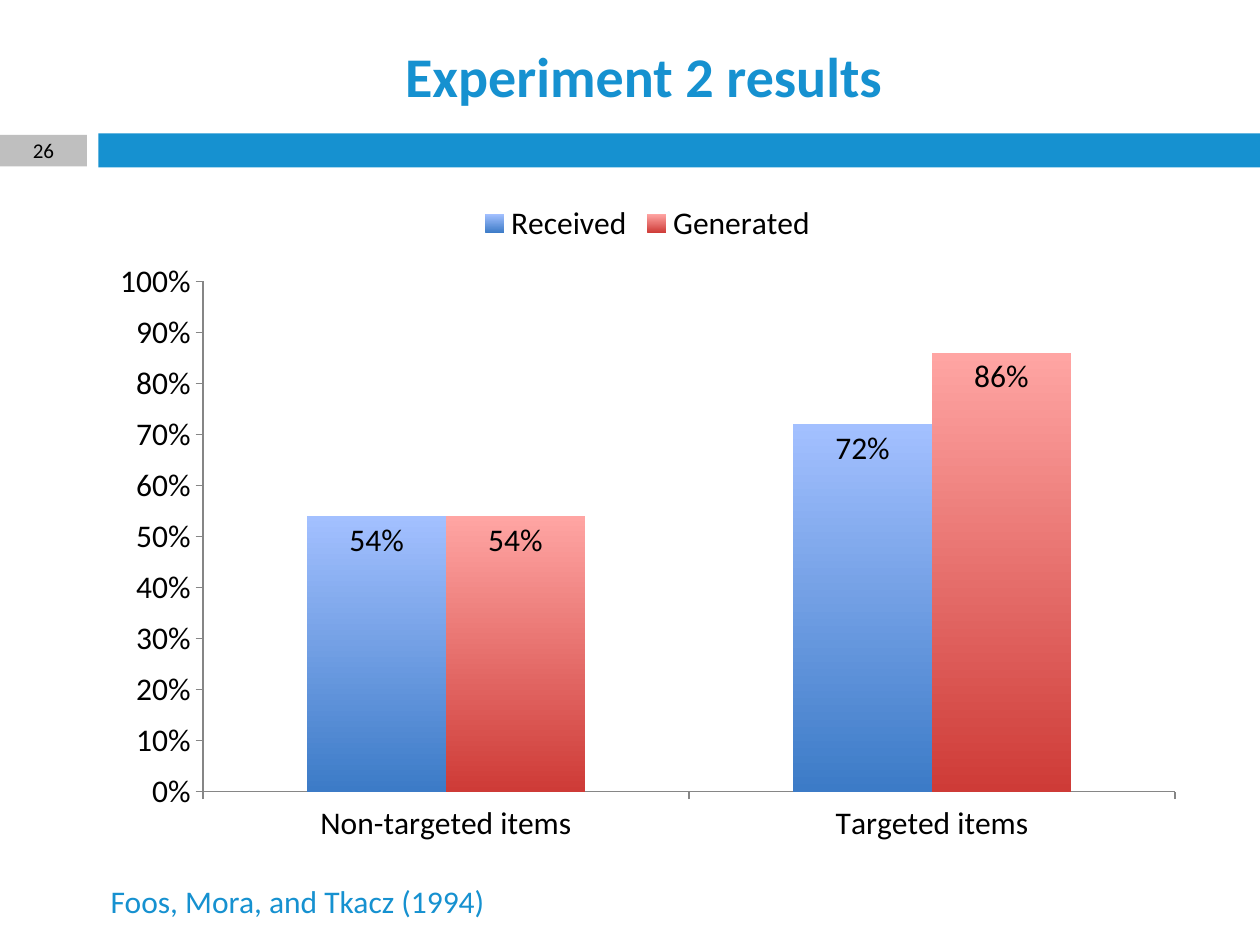
from pptx import Presentation
from pptx.chart.data import CategoryChartData
from pptx.dml.color import RGBColor
from pptx.enum.chart import XL_CHART_TYPE, XL_LABEL_POSITION, XL_LEGEND_POSITION, XL_TICK_MARK
from pptx.enum.shapes import MSO_SHAPE
from pptx.enum.text import MSO_ANCHOR, MSO_AUTO_SIZE, PP_ALIGN
from pptx.util import Inches, Pt

FONT = "Calibri"
COLORS = {
    "accent": "1691D0",
    "gray": "BFBFBF",
    "text": "000000",
    "axis": "868686",
}
CATEGORIES = ["Non-targeted items", "Targeted items"]
SERIES = [
    ("Received", (0.54, 0.72), ("3C7BC7", "A3C0FF")),
    ("Generated", (0.54, 0.86), ("CE3B37", "FFA5A3")),
]


def rgb(name):
    return RGBColor.from_string(COLORS[name])


def set_text(s, text, size, color="text", bold=False, align=PP_ALIGN.LEFT, anchor=MSO_ANCHOR.TOP):
    tf = s.text_frame
    tf.word_wrap = True
    tf.vertical_anchor = anchor
    p = tf.paragraphs[0]
    p.alignment = align
    r = p.add_run()
    r.text = text
    r.font.name = FONT
    r.font.size = Pt(size)
    r.font.bold = bold
    r.font.color.rgb = rgb(color)


def add_bar(slide, box, color):
    s = slide.shapes.add_shape(MSO_SHAPE.RECTANGLE, *box)
    s.shadow.inherit = False
    s.fill.solid()
    s.fill.fore_color.rgb = rgb(color)
    s.line.fill.background()
    return s


def add_title(slide, box, text):
    s = slide.shapes.title
    s.left, s.top, s.width, s.height = box
    set_text(s, text, 32, "accent", True, PP_ALIGN.CENTER, MSO_ANCHOR.MIDDLE)


def add_band(slide, box, number):
    left, top, width, height = box
    tab_width, gap = Inches(0.69), Inches(0.09)
    bar_left = left + tab_width + gap
    add_bar(slide, (bar_left, top, width - tab_width - gap, height), "accent")
    tab_box = (left, top + Inches(0.01), tab_width, height - Inches(0.02))
    tab = add_bar(slide, tab_box, "gray")
    tf = tab.text_frame
    tf.margin_top = tf.margin_bottom = 0
    set_text(tab, number, 12, align=PP_ALIGN.CENTER, anchor=MSO_ANCHOR.MIDDLE)


def add_results_chart(slide, box):
    data = CategoryChartData(number_format="0%")
    data.categories = CATEGORIES
    for name, values, _ in SERIES:
        data.add_series(name, values)
    chart = slide.shapes.add_chart(XL_CHART_TYPE.COLUMN_CLUSTERED, *box, data).chart
    chart.has_title = False
    chart.font.name = FONT
    chart.font.size = Pt(18)
    chart.font.color.rgb = rgb("text")
    chart.has_legend = True
    chart.legend.position = XL_LEGEND_POSITION.TOP
    chart.legend.include_in_layout = False

    for axis in (chart.category_axis, chart.value_axis):
        axis.has_major_gridlines = False
        axis.major_tick_mark = XL_TICK_MARK.OUTSIDE
        axis.minor_tick_mark = XL_TICK_MARK.NONE
        axis.format.line.color.rgb = rgb("axis")
        axis.format.line.width = Pt(0.75)
    value_axis = chart.value_axis
    value_axis.minimum_scale, value_axis.maximum_scale = 0, 1
    value_axis.major_unit = 0.1
    value_axis.tick_labels.number_format = "0%"
    value_axis.tick_labels.number_format_is_linked = False

    plot = chart.plots[0]
    plot.gap_width = 150
    plot.overlap = 0
    plot.vary_by_categories = False
    for series, (_, _, shades) in zip(plot.series, SERIES):
        fill = series.format.fill
        fill.gradient()
        fill.gradient_angle = 90
        for stop, shade in zip(fill.gradient_stops, shades):
            stop.color.rgb = RGBColor.from_string(shade)
        labels = series.data_labels
        labels.show_value = True
        labels.position = XL_LABEL_POSITION.INSIDE_END
        labels.number_format = "0%"
        labels.number_format_is_linked = False


def add_citation(slide, box, text):
    s = slide.shapes.add_textbox(*box)
    set_text(s, text, 18, "accent")
    s.text_frame.auto_size = MSO_AUTO_SIZE.SHAPE_TO_FIT_TEXT


def inches_box(*lengths):
    return tuple(Inches(length) for length in lengths)


def main():
    prs = Presentation()
    prs.slide_width, prs.slide_height = Inches(10), Inches(7.5)
    slide = prs.slides.add_slide(prs.slide_layouts[5])
    add_band(slide, inches_box(0, 1.06, 10, 0.27), "26")
    add_title(slide, inches_box(0.78, 0.26, 8.66, 0.68), "Experiment 2 results")
    add_results_chart(slide, inches_box(0.78, 1.5, 8.72, 5.29))
    add_citation(slide, inches_box(0.78, 6.95, 5.25, 0.4), "Foos, Mora, and Tkacz (1994)")
    prs.save("out.pptx")


if __name__ == "__main__":
    main()
